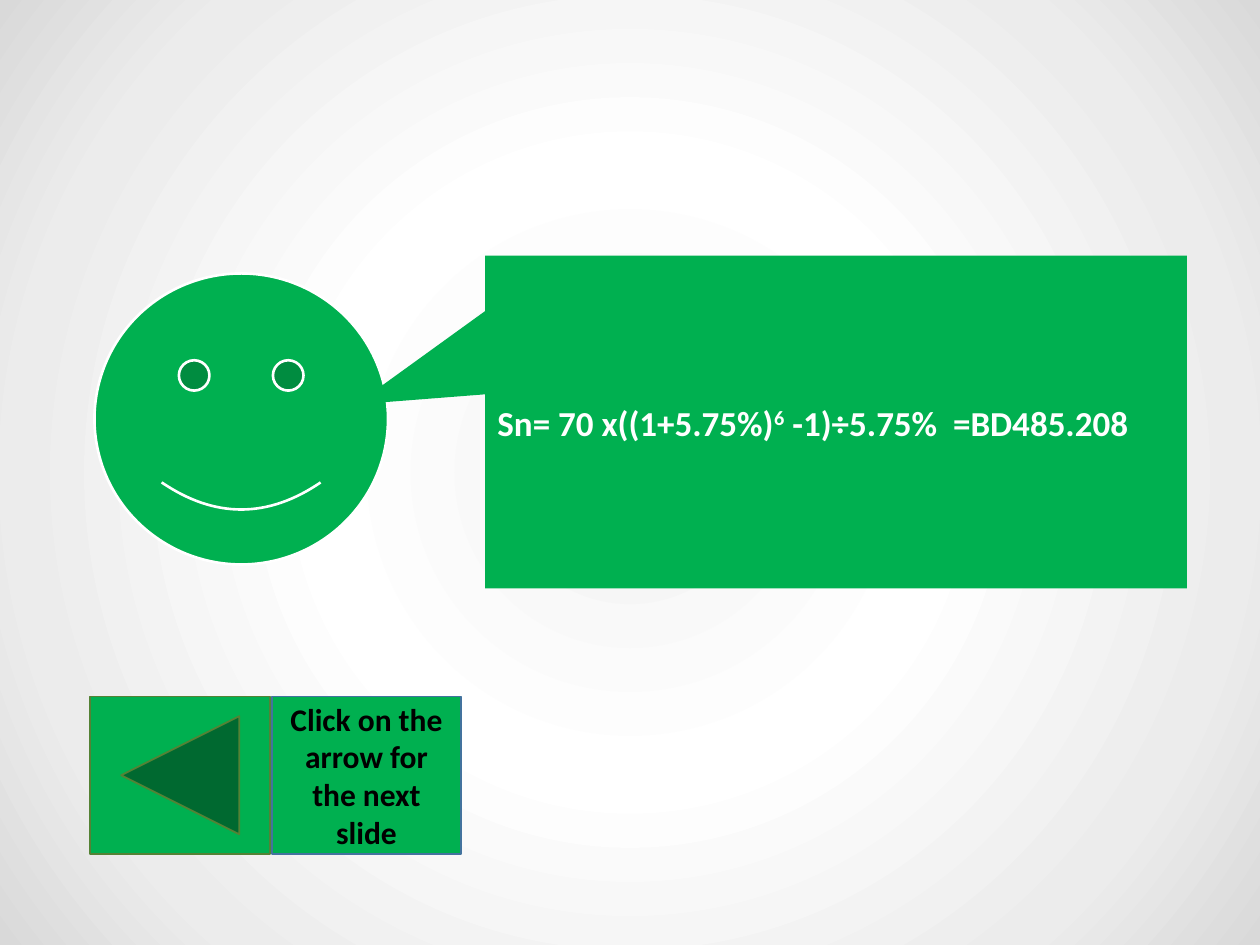
from pptx import Presentation
from pptx.dml.color import RGBColor
from pptx.enum.shapes import MSO_SHAPE
from pptx.enum.text import MSO_ANCHOR, PP_ALIGN
from pptx.oxml import parse_xml
from pptx.oxml.ns import nsdecls
from pptx.util import Pt

GREEN = RGBColor(0x00, 0xB0, 0x50)
DARK_GREEN = RGBColor(0x54, 0x82, 0x35)
BLUE = RGBColor(0x43, 0x73, 0x9E)
WHITE = RGBColor(0xFF, 0xFF, 0xFF)
BLACK = RGBColor(0x00, 0x00, 0x00)
BACKGROUND_STOPS = [(0, "F2F2F2"), (39, "FFFFFF"), (78, "ECECEC"), (100, "D9D9D9")]


def add_green_shape(kind, left, top, width, height, line_color=None, line_width=1):
    shape = slide.shapes.add_shape(kind, Pt(left), Pt(top), Pt(width), Pt(height))
    shape.shadow.inherit = False
    shape.fill.solid()
    shape.fill.fore_color.rgb = GREEN
    if line_color is None:
        shape.line.fill.background()
    else:
        shape.line.color.rgb = line_color
        shape.line.width = Pt(line_width)
    return shape


def style_text(shape, size, color, alignment):
    shape.text_frame.word_wrap = True
    shape.text_frame.vertical_anchor = MSO_ANCHOR.MIDDLE
    paragraph = shape.text_frame.paragraphs[0]
    paragraph.alignment = alignment
    paragraph.font.name = "Calibri"
    paragraph.font.size = Pt(size)
    paragraph.font.bold = True
    paragraph.font.color.rgb = color
    return paragraph


presentation = Presentation()
presentation.slide_width = Pt(720)
presentation.slide_height = Pt(540)
slide = presentation.slides.add_slide(presentation.slide_layouts[6])

# Radial background
stops = "".join(
    f'<a:gs pos="{position * 1000}"><a:srgbClr val="{color}"/></a:gs>'
    for position, color in BACKGROUND_STOPS
)
background = parse_xml(
    f'<p:bg {nsdecls("p", "a")}><p:bgPr><a:gradFill><a:gsLst>{stops}</a:gsLst>'
    '<a:path path="circle"><a:fillToRect l="50000" t="50000" r="50000" b="50000"/></a:path>'
    "</a:gradFill><a:effectLst/></p:bgPr></p:bg>"
)
slide.element.cSld.insert(0, background)

# Smiley and its speech callout
smiley = add_green_shape(MSO_SHAPE.SMILEY_FACE, 54, 156.24, 167.76, 166.32, WHITE, 1.5)
smiley.adjustments[0] = 0.047

# Back button
add_green_shape(
    MSO_SHAPE.ACTION_BUTTON_BACK_OR_PREVIOUS, 51.5, 398, 103, 90, DARK_GREEN
)

callout = add_green_shape(MSO_SHAPE.RECTANGULAR_CALLOUT, 277.2, 146.16, 401.04, 190.08)
callout.adjustments[0] = -0.684
callout.adjustments[1] = -0.053
formula = style_text(callout, 20, WHITE, PP_ALIGN.LEFT)
formula.add_run().text = "Sn= 70 x((1+5.75%)"
exponent = formula.add_run()
exponent.text = "6"
exponent.font._element.set("baseline", "30000")
formula.add_run().text = " -1)÷5.75%  =BD485.208"

# Hint beside the button
hint = add_green_shape(MSO_SHAPE.PENTAGON, 155.5, 398, 108, 90, BLUE)
hint.adjustments[0] = 0
hint.element.spPr.xfrm.set("flipH", "1")
hint.text_frame.text = "Click on the arrow for the next slide"
style_text(hint, 18, BLACK, PP_ALIGN.CENTER)

presentation.save("out.pptx")
